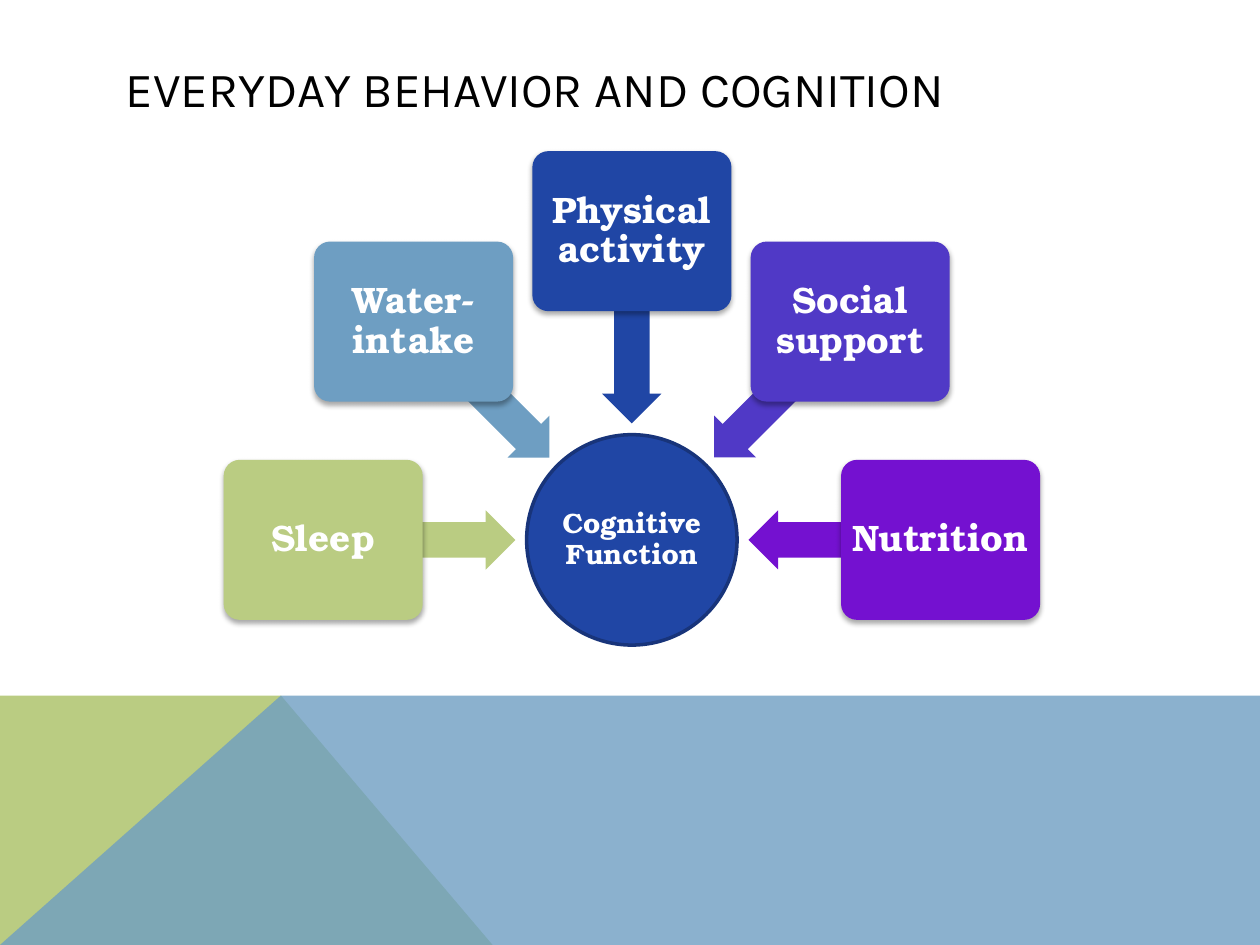
from dataclasses import dataclass
from math import cos, radians, sin

from lxml import etree
from pptx import Presentation
from pptx import util as u
from pptx.dml.color import RGBColor
from pptx.enum import shapes, text
from pptx.oxml.ns import qn

CELL = u.Inches(0.1)  # grid of 100 columns by 75 rows
COLS, ROWS = 100, 75

WHITE = RGBColor(0xFF, 0xFF, 0xFF)
BLACK = RGBColor(0x00, 0x00, 0x00)
GREEN = RGBColor(0xBA, 0xCC, 0x82)
SKY = RGBColor(0x6E, 0x9E, 0xC2)
BLUE = RGBColor(0x20, 0x46, 0xA5)
NAVY = RGBColor(0x18, 0x34, 0x7A)
INDIGO = RGBColor(0x50, 0x39, 0xC6)
VIOLET = RGBColor(0x74, 0x11, 0xD0)
HEAD, BODY = "Karla", "TeX Gyre Bonum"

HUB_X, HUB_Y, HUB_D = 50.15, 42.85, 16.7
BOX_W, BOX_H, BOX_R = 15.8, 12.7, 24.5
ARROW_W, ARROW_H, ARROW_R = 15.3, 4.7, 16.9
BAND, PEAK, FOOT = 55.2, 22.3, 39.1


@dataclass
class Factor:
    label: str
    color: RGBColor
    angle: int  # clockwise from the right of the hub


FACTORS = [
    Factor("Sleep", GREEN, 180),
    Factor("Water-intake", SKY, 225),
    Factor("Physical activity", BLUE, 270),
    Factor("Social support", INDIGO, 315),
    Factor("Nutrition", VIOLET, 0),
]


def grid(n: float) -> int:
    return round(n * CELL)


def paint(shape, color: RGBColor) -> None:
    shape.shadow.inherit = False
    shape.fill.solid()
    shape.fill.fore_color.rgb = color
    shape.line.fill.background()


def fade(node, share: int) -> None:
    etree.SubElement(node, qn("a:alpha")).set("val", str(share * 1000))


def shade(shape) -> None:
    """Soft shadow straight below the shape."""
    effects = shape._element.spPr.find(qn("a:effectLst"))
    drop = etree.SubElement(effects, qn("a:outerShdw"), blurRad=str(u.Pt(3.1)),
                            dist=str(u.Pt(1.8)), dir="5400000", rotWithShape="0")
    fade(etree.SubElement(drop, qn("a:srgbClr"), val="000000"), 35)


def place(slide, kind, x: float, y: float, w: float, h: float, color: RGBColor):
    """Add a shape centred on x, y."""
    shape = slide.shapes.add_shape(
        kind, grid(x - w / 2), grid(y - h / 2), grid(w), grid(h))
    paint(shape, color)
    return shape


def write(shape, label: str, size: int, inset: float) -> None:
    frame = shape.text_frame
    frame.text = label
    frame.word_wrap = True
    frame.vertical_anchor = text.MSO_ANCHOR.MIDDLE
    frame.margin_left = frame.margin_right = grid(inset)
    frame.margin_top = frame.margin_bottom = grid(inset)
    para = frame.paragraphs[0]
    para.alignment = text.PP_ALIGN.CENTER
    para.line_spacing = 0.9
    style(para.runs[0].font, BODY, size, WHITE, True)


def style(font, name: str, size: int, color: RGBColor, bold: bool) -> None:
    font.name, font.size, font.bold = name, u.Pt(size), bold
    font.color.rgb = color


def area(slide, points: list[tuple[float, float]], color: RGBColor):
    first, *rest = [(grid(x), grid(y)) for x, y in points]
    path = slide.shapes.build_freeform(*first)
    path.add_line_segments(rest, close=True)
    shape = path.convert_to_shape()
    paint(shape, color)
    return shape


def spoke(slide, item: Factor) -> None:
    """Arrow towards the hub, with its box on the outer end."""
    dx, dy = cos(radians(item.angle)), sin(radians(item.angle))
    arrow = place(slide, shapes.MSO_SHAPE.LEFT_ARROW, HUB_X + ARROW_R * dx,
                  HUB_Y + ARROW_R * dy, ARROW_W, ARROW_H, item.color)
    arrow.adjustments[0], arrow.adjustments[1] = 0.6, 0.5
    arrow.rotation = item.angle
    box = place(slide, shapes.MSO_SHAPE.ROUNDED_RECTANGLE, HUB_X + BOX_R * dx,
                HUB_Y + BOX_R * dy, BOX_W, BOX_H, item.color)
    box.adjustments[0] = 0.1
    shade(box)
    write(box, item.label, 21, 0.4)


def main() -> None:
    deck = Presentation()
    deck.slide_width, deck.slide_height = grid(COLS), grid(ROWS)
    slide = deck.slides.add_slide(deck.slide_layouts[6])

    # Bottom band
    area(slide, [(0, ROWS), (0, BAND), (PEAK, BAND), (FOOT, ROWS)], GREEN)
    veil = area(slide, [(0, ROWS), (PEAK, BAND), (COLS, BAND), (COLS, ROWS)], SKY)
    fade(veil._element.spPr.find(qn("a:solidFill"))[0], 80)

    # Title
    title = slide.shapes.add_textbox(grid(9), grid(4), grid(82.2), grid(6))
    frame = title.text_frame
    frame.text = "EVERYDAY BEHAVIOR AND COGNITION"
    frame.word_wrap = True
    frame.vertical_anchor = text.MSO_ANCHOR.MIDDLE
    style(frame.paragraphs[0].runs[0].font, HEAD, 28, BLACK, False)

    # Hub and spokes
    hub = place(slide, shapes.MSO_SHAPE.OVAL, HUB_X, HUB_Y, HUB_D, HUB_D, BLUE)
    hub.line.color.rgb = NAVY
    hub.line.width = u.Pt(2)
    write(hub, "Cognitive Function", 16, 0.1)
    for item in FACTORS:
        spoke(slide, item)

    deck.save("out.pptx")


if __name__ == "__main__":
    main()
